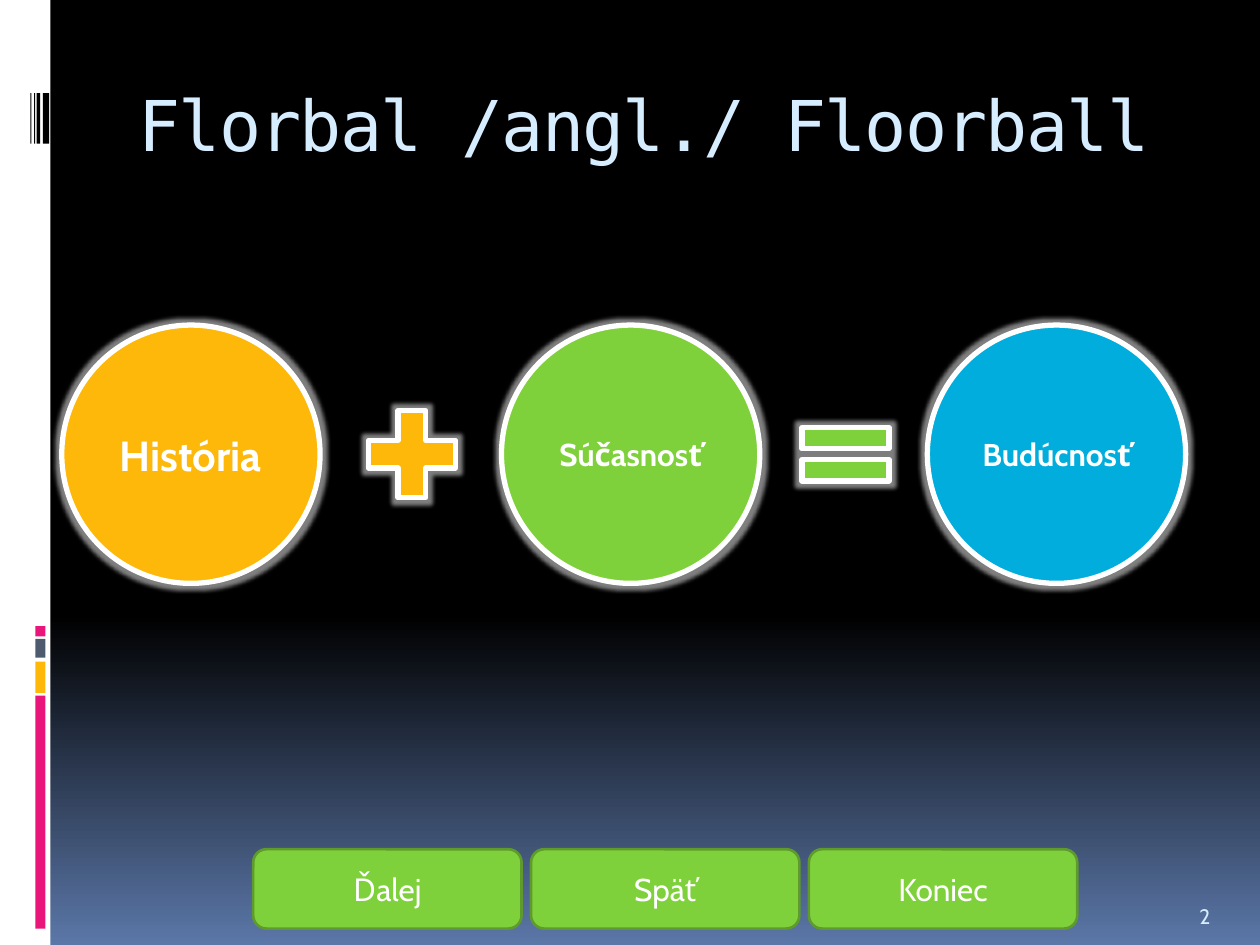
from copy import deepcopy

from lxml.etree import SubElement
from pptx import Presentation
from pptx.dml.color import RGBColor
from pptx.enum.shapes import MSO_SHAPE as Shape
from pptx.enum.text import MSO_ANCHOR as Anchor, PP_ALIGN as Align
from pptx.oxml.ns import qn
from pptx.util import Inches, Pt

COLORS = {
    "black": "000000", "white": "FFFFFF", "horizon": "5B77A8",
    "pink": "EA157A", "amber": "FEB80A", "slate": "4E5B6F",
    "green": "7FD13B", "dark_green": "5E9B2C", "blue": "00ADDC",
    "pale": "D6ECFF",
}
BODY_FONT = "Cabin"
TITLE_FONT = "DejaVu Sans Mono"


def rgb(name):
    """Return the named palette colour."""
    return RGBColor.from_string(COLORS[name])


def write(frame, text, size, color, font=BODY_FONT, bold=False, align=Align.LEFT):
    """Put one formatted paragraph in a text frame."""
    frame.word_wrap = True
    paragraph = frame.paragraphs[0]
    paragraph.text = text
    paragraph.alignment = align
    paragraph.font.name = font
    paragraph.font.size = Pt(size)
    paragraph.font.bold = bold
    paragraph.font.color.rgb = rgb(color)
    return paragraph


def add_block(slide, kind, box, fill, line=None, weight=0):
    """Add a flat filled shape, outlined when a line colour is given."""
    block = slide.shapes.add_shape(kind, *map(Inches, box))
    block.shadow.inherit = False
    block.fill.solid()
    block.fill.fore_color.rgb = rgb(fill)
    if line:
        block.line.color.rgb = rgb(line)
        block.line.width = Pt(weight)
    else:
        block.line.fill.background()
    return block


def add_label(block, text, size, bold=False):
    """Centre a white label inside a shape."""
    frame = block.text_frame
    frame.vertical_anchor = Anchor.MIDDLE
    frame.margin_left = frame.margin_right = Inches(0.05)
    write(frame, text, size, "white", bold=bold, align=Align.CENTER)


def add_glow(block):
    """Surround a shape with a soft white glow."""
    effects = block._element.spPr.find(qn("a:effectLst"))
    glow = SubElement(effects, qn("a:glow"), rad=str(Pt(5)))
    color = SubElement(glow, qn("a:srgbClr"), val=COLORS["white"])
    SubElement(color, qn("a:alpha"), val="50000")


def paint_background(slide):
    """Fade the background from black to blue at the bottom."""
    fill = slide.background.fill
    fill.gradient()
    fill.gradient_angle = 270
    first = fill.gradient_stops[0]._gs
    first.addnext(deepcopy(first))
    stops = ((0, "black"), (0.65, "black"), (1, "horizon"))
    for stop, (position, color) in zip(fill.gradient_stops, stops):
        stop.position = position
        stop.color.rgb = rgb(color)


def add_sidebar(slide, left, top, width, height):
    """Draw the white side band with its coloured bars and barcode."""
    add_block(slide, Shape.RECTANGLE, (left, top, width, height), "white")
    bars = ((4.97, 0.08, "pink"), (5.07, 0.15, "slate"),
            (5.25, 0.25, "amber"), (5.52, 1.85, "pink"))
    for offset, length, color in bars:
        box = (left + 0.28, top + offset, 0.08, length)
        add_block(slide, Shape.RECTANGLE, box, color)
    for offset, thickness in ((0.24, 0.01), (0.27, 0.01), (0.29, 0.03), (0.34, 0.05)):
        box = (left + offset, top + 0.74, thickness, 0.4)
        add_block(slide, Shape.RECTANGLE, box, "black")


def add_title(slide, left, top, width, height):
    """Write the slide title."""
    title = slide.shapes.add_textbox(*map(Inches, (left, top, width, height)))
    title.text_frame.margin_top = Inches(0.09)
    paragraph = write(title.text_frame, "Florbal /angl./ Floorball", 40, "pale", TITLE_FONT)
    paragraph.runs[0].font._element.set("spc", "-100")


def add_equation(slide, left, top, diameter):
    """Draw history plus present equals future."""
    middle = top + diameter / 2
    circles = ((0, "História", 24, "amber"), (3.49, "Súčasnosť", 18, "green"),
               (6.87, "Budúcnosť", 18, "blue"))
    for offset, text, size, color in circles:
        box = (left + offset, top, diameter, diameter)
        circle = add_block(slide, Shape.OVAL, box, color, "white", 3)
        add_glow(circle)
        add_label(circle, text, size, bold=True)
    operators = ((Shape.MATH_EQUAL, 5.75, 0.72, "green"),
                 (Shape.MATH_PLUS, 2.31, 0.94, "amber"))
    for kind, offset, height, color in operators:
        box = (left + offset, middle - height / 2, 0.94, height)
        add_glow(add_block(slide, kind, box, color, "white", 3))


def add_navigation(slide, left, top, width, height):
    """Lay out the three navigation buttons in a row."""
    buttons = ((Shape.ROUNDED_RECTANGLE, "Ďalej"),
               (Shape.FLOWCHART_ALTERNATE_PROCESS, "Späť"),
               (Shape.FLOWCHART_ALTERNATE_PROCESS, "Koniec"))
    button_width = 2.13
    step = (width - button_width) / (len(buttons) - 1)
    for index, (kind, text) in enumerate(buttons):
        box = (left + index * step, top, button_width, height)
        button = add_block(slide, kind, box, "green", "dark_green", 1.5)
        add_label(button, text, 18)


def add_page_number(slide, left, top, width, height):
    """Write the page number in the corner."""
    number = slide.shapes.add_textbox(*map(Inches, (left, top, width, height)))
    number.text_frame.vertical_anchor = Anchor.BOTTOM
    write(number.text_frame, "2", 12, "pale")


def main():
    """Build and save the slide."""
    deck = Presentation()
    deck.slide_width, deck.slide_height = Inches(10), Inches(7.5)
    slide = deck.slides.add_slide(deck.slide_layouts[6])
    paint_background(slide)
    add_sidebar(slide, 0, 0, 0.4, 7.5)
    add_navigation(slide, 2.01, 6.74, 6.54, 0.63)
    add_title(slide, 1, 0.56, 8.5, 1)
    add_page_number(slide, 9.42, 7.02, 0.5, 0.4)
    add_equation(slide, 0.49, 2.58, 2.05)
    deck.save("out.pptx")


if __name__ == "__main__":
    main()
